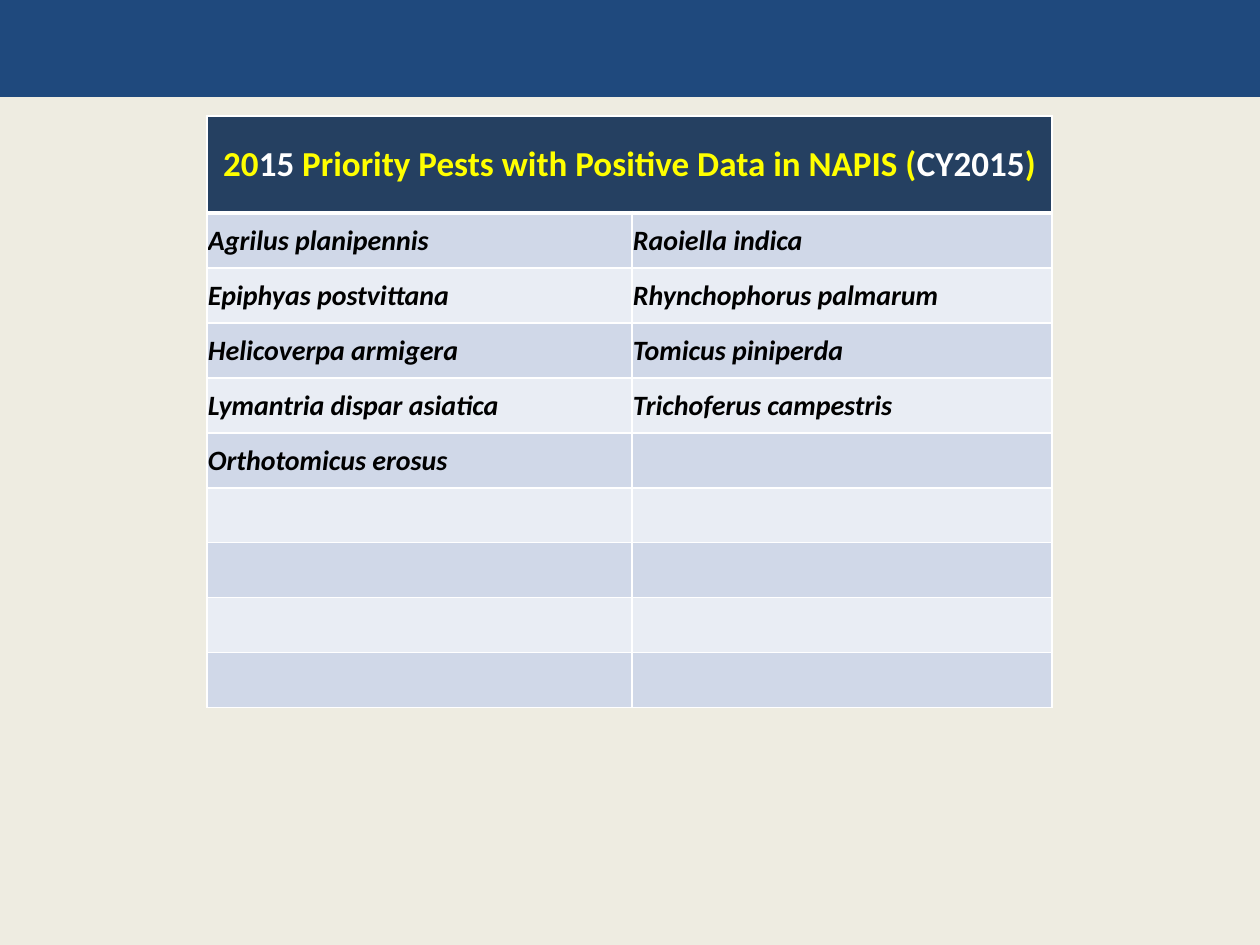
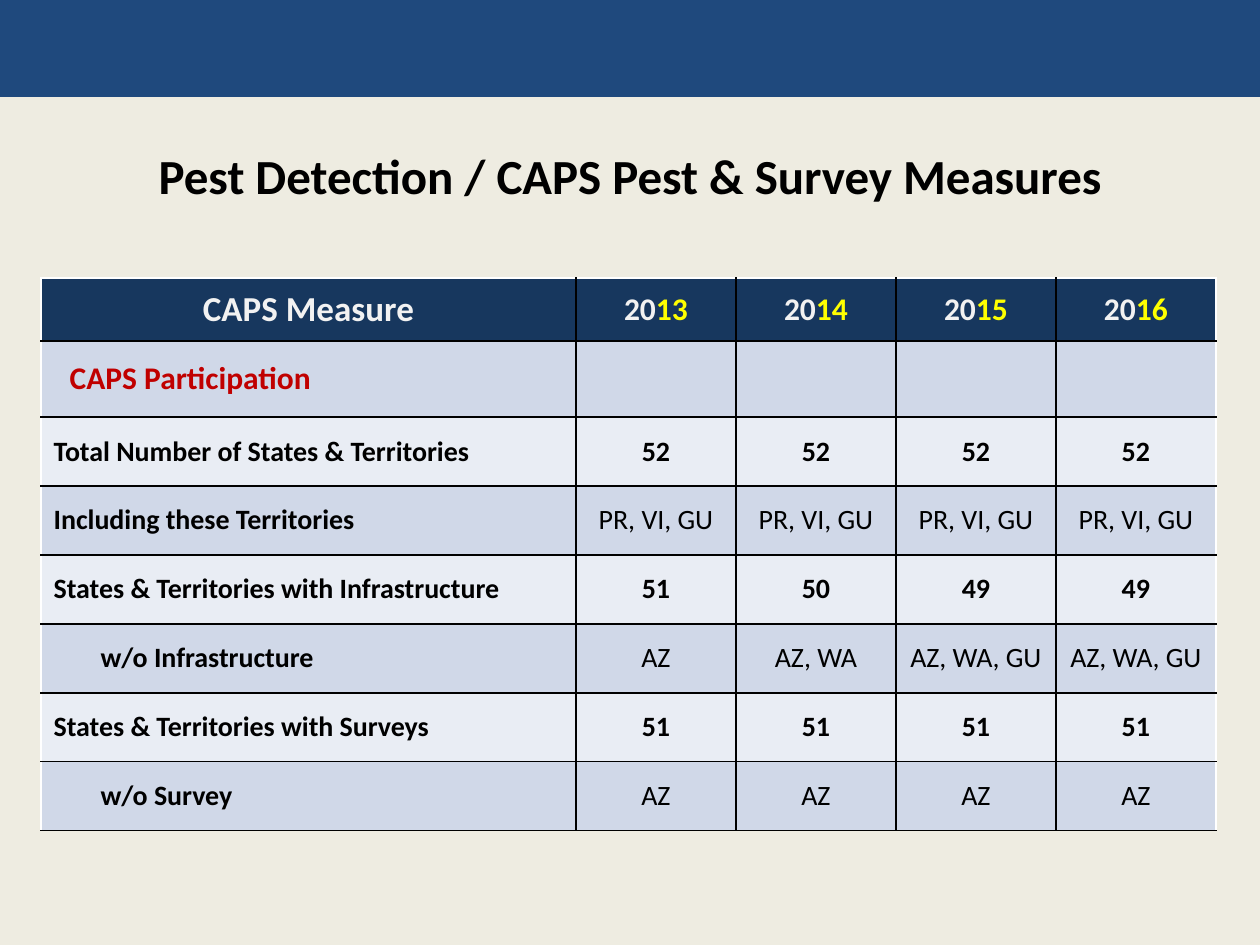
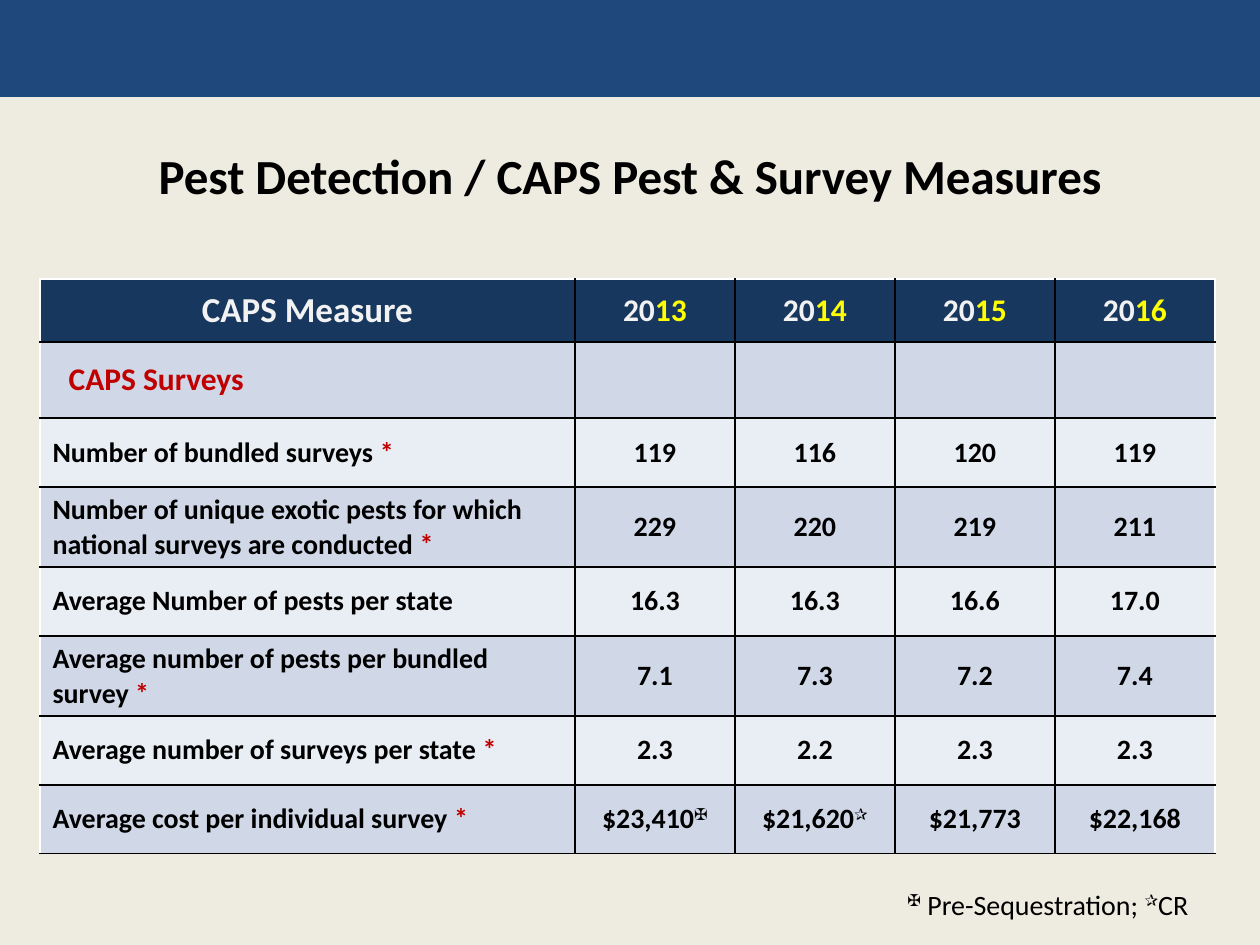
"""Build three slides of pest detection survey tables."""
from lxml import etree
from pptx import Presentation
from pptx import util as u
from pptx.dml.color import RGBColor
from pptx.enum import shapes, text
from pptx.oxml import ns

CREAM = RGBColor(0xEE, 0xEC, 0xE1)
BLUE = RGBColor(0x1F, 0x49, 0x7D)
SLATE = RGBColor(0x25, 0x40, 0x61)
NAVY = RGBColor(0x17, 0x37, 0x5E)
BANDS = (RGBColor(0xE9, 0xED, 0xF4), RGBColor(0xD0, 0xD8, 0xE8))
WHITE = RGBColor(0xFF, 0xFF, 0xFF)
PALE = RGBColor(0xF2, 0xF2, 0xF2)
YELLOW = RGBColor(0xFF, 0xFF, 0x00)
RED = RGBColor(0xC0, 0x00, 0x00)
BLACK = RGBColor(0, 0, 0)
FONT = "Calibri"
TITLE = "Pest Detection / CAPS Pest & Survey Measures"
TITLE_ONLY, BLANK = 5, 6
CENTER = text.PP_ALIGN.CENTER
LEFT = text.PP_ALIGN.LEFT
STAR = (" *", RED)


def px(n):
    return u.Emu(round(n * 914400 / 126))


def sup(mark, bold=None):
    return mark, BLACK, True, bold


class Deck:
    def __init__(self):
        self.prs = Presentation()
        self.prs.slide_width, self.prs.slide_height = px(1260), px(945)
        fill = self.prs.slide_master.background.fill
        fill.solid()
        fill.fore_color.rgb = CREAM

    def slide(self, title=None):
        layout = self.prs.slide_layouts[TITLE_ONLY if title else BLANK]
        self.s = self.prs.slides.add_slide(layout)
        band = self.s.shapes.add_shape(
            shapes.MSO_SHAPE.RECTANGLE, 0, 0, px(1260), px(97))
        band.shadow.inherit = False
        band.fill.solid()
        band.fill.fore_color.rgb = BLUE
        band.line.fill.background()
        if title:
            sp = self.s.shapes.title
            sp.left, sp.top, sp.width, sp.height = map(px, (63, 126, 1134, 98))
            tf = sp.text_frame
            tf.vertical_anchor = text.MSO_ANCHOR.MIDDLE
            self.put_text(tf.paragraphs[0], [title], 28, align=CENTER, shadow=True)

    def put_text(self, p, runs, size, color=BLACK, bold=True, italic=False,
                 align=LEFT, indent=0, shadow=False):
        p.alignment = align
        if indent:
            pPr = p._p.get_or_add_pPr()
            pPr.set("marL", str(px(indent)))
            pPr.set("indent", "0")
        p.font.name, p.font.size = FONT, u.Pt(size)
        p.font.bold, p.font.italic = bold, italic
        for run in runs:
            words, tint, raised, heavy = (
                (run, color, False, None) if isinstance(run, str)
                else (*run, False, None)[:4])
            r = p.add_run()
            r.text = words
            r.font.color.rgb = tint
            r.font.bold = heavy
            rPr = r._r.get_or_add_rPr()
            if raised:
                rPr.set("baseline", "30000")
            if shadow:
                self.shade(rPr)

    def shade(self, rPr):
        effects = etree.Element(ns.qn("a:effectLst"))
        outer = etree.SubElement(effects, ns.qn("a:outerShdw"), blurRad="50800",
                                 dist="38100", dir="2700000", algn="tl")
        tint = etree.SubElement(outer, ns.qn("a:srgbClr"), val=str(BLACK))
        etree.SubElement(tint, ns.qn("a:alpha"), val="50000")
        rPr.find(ns.qn("a:solidFill")).addnext(effects)

    def note(self, x, y, w, h, runs):
        tf = self.s.shapes.add_textbox(*map(px, (x, y, w, h))).text_frame
        tf.word_wrap = True
        tf.auto_size = text.MSO_AUTO_SIZE.SHAPE_TO_FIT_TEXT
        self.put_text(tf.paragraphs[0], runs, 16, bold=False, shadow=True)

    def table(self, x, y, cols, rows, inner, head):
        tbl = self.s.shapes.add_table(
            len(rows), len(cols), px(x), px(y), px(sum(cols)), px(sum(rows))).table
        tbl.first_row = tbl.horz_banding = False
        for col, w in zip(tbl.columns, cols):
            col.width = px(w)
        for i, (row, h) in enumerate(zip(tbl.rows, rows)):
            row.height = px(h)
            for j, cell in enumerate(row.cells):
                edges = {"L": inner if j else WHITE,
                         "R": inner if j < len(cols) - 1 else WHITE,
                         "T": inner if i else WHITE, "B": inner}
                for side, color in edges.items():
                    thick = inner == WHITE and (i, side) in ((0, "B"), (1, "T"))
                    self.border(cell, side, color, 3 if thick else 1)
                cell.fill.solid()
                cell.fill.fore_color.rgb = BANDS[i % 2] if i else head
                cell.vertical_anchor = text.MSO_ANCHOR.MIDDLE
        return tbl

    def border(self, cell, side, color, width):
        ln = etree.SubElement(cell._tc.get_or_add_tcPr(), ns.qn(f"a:ln{side}"),
                              w=str(u.Pt(width)))
        fill = etree.SubElement(ln, ns.qn("a:solidFill"))
        etree.SubElement(fill, ns.qn("a:srgbClr"), val=str(color))

    def cell(self, cell, runs, size=16, margin=None, **style):
        if margin is not None:
            cell.margin_left = cell.margin_right = px(margin)
            cell.margin_top = px(margin)
            cell.margin_bottom = 0
        self.put_text(cell.text_frame.paragraphs[0], runs, size, **style)

    def measures(self, x, y, heights, section, rows):
        tbl = self.table(x, y, [535] + [160] * 4, heights, BLACK, NAVY)
        self.cell(tbl.cell(0, 0), ["CAPS Measure"], 20, color=PALE, align=CENTER)
        for j, year in enumerate(range(13, 17), 1):
            self.cell(tbl.cell(0, j), ["20", (str(year), YELLOW)], 18,
                      color=PALE, align=CENTER)
        self.cell(tbl.cell(1, 0), [section], 18, color=RED, indent=16)
        for i, (label, indent, bold, values) in enumerate(rows, 2):
            self.cell(tbl.cell(i, 0), label, indent=indent)
            for j, value in enumerate(values, 1):
                self.cell(tbl.cell(i, j), value, margin=0, bold=bold, align=CENTER)


def pests(deck):
    deck.slide()
    tbl = deck.table(207, 116, [425, 420], [97] + [55] * 9, WHITE, SLATE)
    tbl.cell(0, 0).merge(tbl.cell(0, 1))
    deck.cell(tbl.cell(0, 0),
              ["20", ("15", WHITE), " Priority Pests with Positive Data in NAPIS (",
               ("CY2015", WHITE), ")"], 20, color=YELLOW, align=CENTER)
    columns = (
        ("Agrilus planipennis", "Epiphyas postvittana", "Helicoverpa armigera",
         "Lymantria dispar asiatica", "Orthotomicus erosus"),
        ("Raoiella indica", "Rhynchophorus palmarum", "Tomicus piniperda",
         "Trichoferus campestris"))
    for j, names in enumerate(columns):
        for i, name in enumerate(names, 1):
            deck.cell(tbl.cell(i, j), [name], margin=1, italic=True)


def participation(deck):
    deck.slide(TITLE)
    deck.measures(41, 278, [63, 76] + [69] * 6, "CAPS Participation", [
        (["Total Number of States & Territories"], 0, True, [["52"]] * 4),
        (["Including these Territories"], 0, False, [["PR, VI, GU"]] * 4),
        (["States & Territories with Infrastructure"], 0, True,
         [["51"], ["50"], ["49"], ["49"]]),
        (["w/o Infrastructure"], 47, False,
         [["AZ"], ["AZ, WA"], ["AZ, WA, GU"], ["AZ, WA, GU"]]),
        (["States & Territories with Surveys"], 0, True, [["51"]] * 4),
        (["w/o Survey"], 47, False, [["AZ"]] * 4)])


def surveys(deck):
    deck.slide(TITLE)
    deck.note(895, 881, 320, 46, [
        sup("✠"), " Pre-Sequestration; ", sup("✰", True), "CR"])
    deck.measures(40, 279, [63, 76, 69, 80, 69, 80, 69, 69], "CAPS Surveys", [
        (["Number of bundled surveys", STAR], 0, True,
         [["119"], ["116"], ["120"], ["119"]]),
        (["Number of unique exotic pests for which national surveys are conducted",
          STAR], 0, True, [["229"], ["220"], ["219"], ["211"]]),
        (["Average Number of pests per state"], 0, True,
         [["16.3"], ["16.3"], ["16.6"], ["17.0"]]),
        (["Average number of pests per bundled survey", STAR], 0, True,
         [["7.1"], ["7.3"], ["7.2"], ["7.4"]]),
        (["Average number of surveys per state", STAR], 0, True,
         [["2.3"], ["2.2"], ["2.3"], ["2.3"]]),
        (["Average cost per individual survey", STAR], 0, True,
         [["$23,410", sup("✠")], ["$21,620", sup("✰")], ["$21,773"], ["$22,168"]])])


def main():
    deck = Deck()
    pests(deck)
    participation(deck)
    surveys(deck)
    deck.prs.save("out.pptx")


if __name__ == "__main__":
    main()
